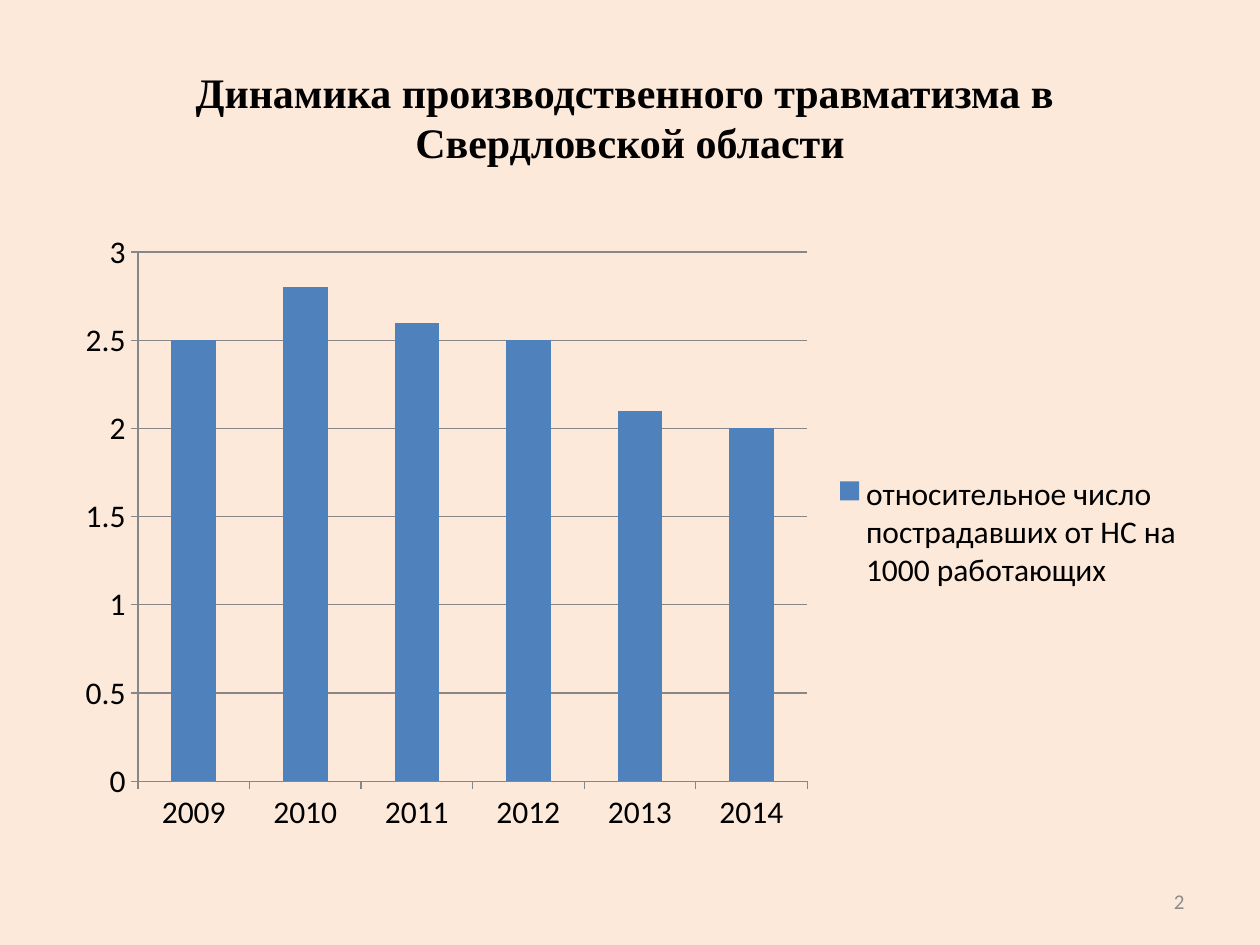
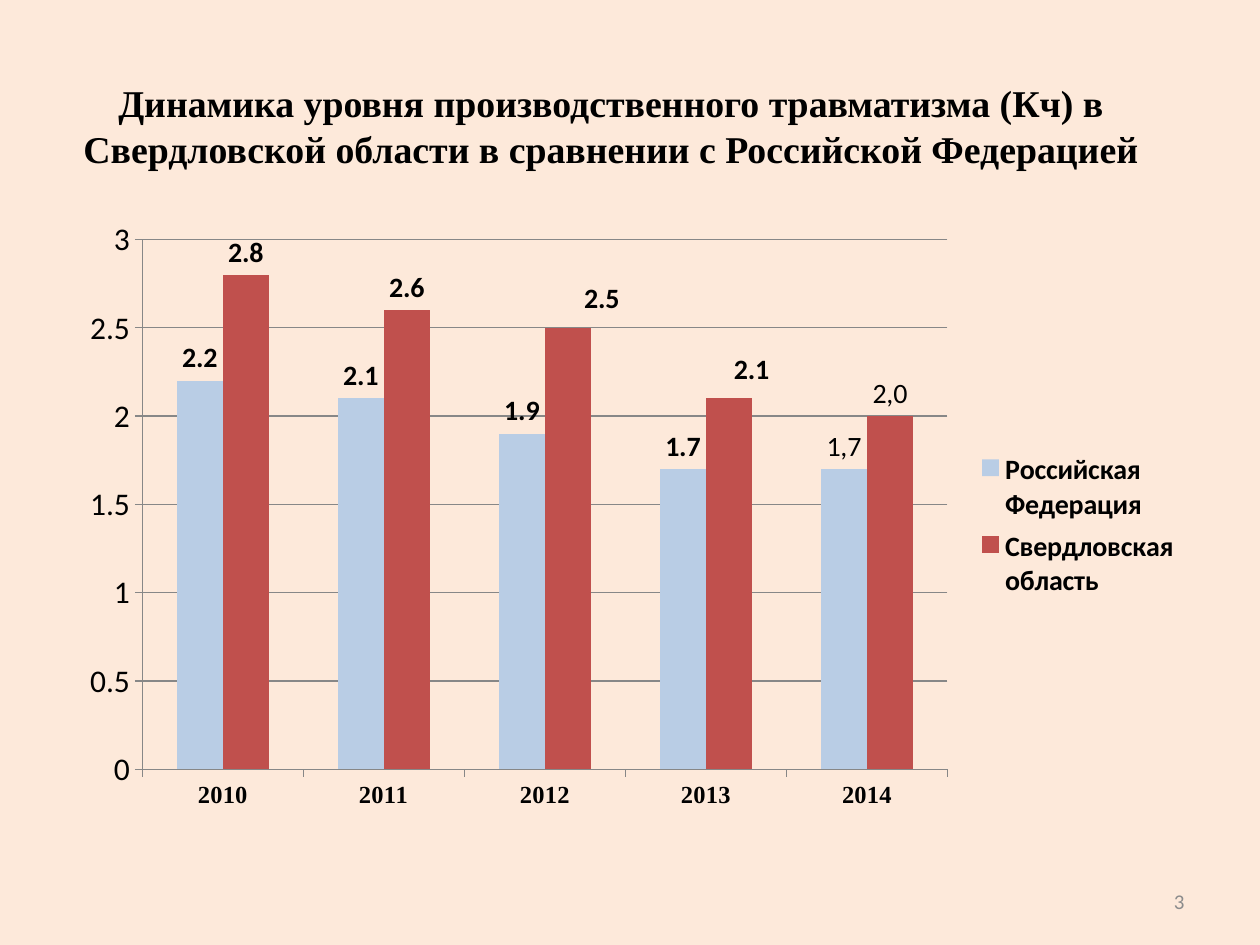
from lxml import etree
from pptx import Presentation
from pptx.chart.data import CategoryChartData
from pptx.dml.color import RGBColor
from pptx.enum.chart import (XL_CHART_TYPE as CHART, XL_LABEL_POSITION as LABEL,
                             XL_LEGEND_POSITION as LEGEND, XL_TICK_MARK as TICK)
from pptx.enum.text import MSO_ANCHOR as ANCHOR, PP_ALIGN as ALIGN
from pptx.oxml.ns import qn
from pptx.util import Inches, Pt

# Content
SLIDES = [
    dict(number=2, title="Динамика производственного травматизма в \vСвердловской области",
         title_at=(0.5, 0.3, 9, 1.25), title_size=24,
         years=["2009", "2010", "2011", "2012", "2013", "2014"],
         series=[dict(name="относительное число пострадавших от НС на 1000 работающих",
                      values=[2.5, 2.8, 2.6, 2.5, 2.1, 2], color="4F81BD")]),
    dict(number=3, title="Динамика уровня производственного травматизма (Кч) в "
                         "Свердловской области в сравнении с Российской Федерацией",
         title_at=(0.35, 0.37, 9, 1.25), title_size=21.6,
         years=["2010", "2011", "2012", "2013", "2014"],
         plot=dict(x=0.07, y=0.03, w=0.71, h=0.85),
         legend=dict(x=0.8, y=0.36, w=0.19, h=0.26),
         year_font=dict(name="Times New Roman", size=14, bold=True),
         legend_font=dict(size=16, bold=True),
         series=[dict(name="Российская Федерация", values=[2.2, 2.1, 1.9, 1.7, 1.7],
                      color="B9CDE5", labels=True, texts={4: "1,7"}),
                 dict(name="Свердловская область", values=[2.8, 2.6, 2.5, 2.1, 2],
                      color="C0504D", labels=True, texts={4: "2,0"},
                      shifts={2: dict(x=0.03, y=-0.01), 3: dict(x=0.02, y=-0.01)})]),
]

# Shared look
BACKGROUND, BLACK, GREY, AXIS = "FDE9DA", "000000", "8C8C8C", "878787"
CHART_AT = (0.5, 1.75, 9, 4.95)
NUMBER_AT = (7.17, 6.95, 2.33, 0.4)
TITLE_FONT = dict(name="Times New Roman", bold=True, color=BLACK)
NUMBER_FONT = dict(name="Calibri", size=12, color=GREY)
CHART_FONT = dict(name="Calibri", size=18, color=BLACK)
LABEL_FONT = dict(name="Calibri", size=16, bold=True, color=BLACK)


def rgb(value):
    return RGBColor.from_string(value)


def set_font(font, style):
    for key, value in style.items():
        if key == "color":
            font.color.rgb = rgb(value)
        else:
            setattr(font, key, Pt(value) if key == "size" else value)


def add_text(s, text, at, align, style):
    tf = s.shapes.add_textbox(*map(Inches, at)).text_frame
    tf.word_wrap, tf.vertical_anchor = True, ANCHOR.MIDDLE
    p = tf.paragraphs[0]
    p.text, p.alignment = text, align
    for r in p.runs:
        set_font(r.font, style)


def manual_layout(values, **modes):
    """Layout element; values are fractions of the chart area."""
    layout = etree.Element(qn("c:layout"))
    manual = etree.SubElement(layout, qn("c:manualLayout"))
    for tag, value in {**modes, **values}.items():
        etree.SubElement(manual, qn("c:" + tag)).set("val", str(value))
    return layout


def drop_layout(element):
    for old in element.findall(qn("c:layout")):
        element.remove(old)


def add_labels(series, item):
    labels = series.data_labels
    labels.show_value, labels.position = True, LABEL.OUTSIDE_END
    set_font(labels.font, LABEL_FONT)
    # Typed labels are not bold
    for i, text in item.get("texts", {}).items():
        label = series.points[i].data_label
        label.text_frame.text = text
        label.position = LABEL.OUTSIDE_END
        set_font(label.text_frame.paragraphs[0].runs[0].font, {**LABEL_FONT, "bold": False})
    # Labels moved away from their columns
    for i, shift in item.get("shifts", {}).items():
        label = series.points[i].data_label
        set_font(label.font, LABEL_FONT)
        label.position = LABEL.OUTSIDE_END
        for idx in labels._element.findall(qn("c:dLbl") + "/" + qn("c:idx")):
            if idx.get("val") == str(i):
                idx.addnext(manual_layout(shift))
    # No leader lines to moved labels
    for old in labels._element.findall(qn("c:showLeaderLines")):
        labels._element.remove(old)
    etree.SubElement(labels._element, qn("c:showLeaderLines")).set("val", "0")


def add_column_chart(s, spec):
    data = CategoryChartData()
    data.categories = spec["years"]
    for item in spec["series"]:
        data.add_series(item["name"], item["values"])
    chart = s.shapes.add_chart(CHART.COLUMN_CLUSTERED, *map(Inches, CHART_AT), data).chart
    chart.has_title = False
    set_font(chart.font, CHART_FONT)

    # Axes and gridlines
    years, values = chart.category_axis, chart.value_axis
    values.has_major_gridlines = True
    values.minimum_scale, values.maximum_scale, values.major_unit = 0, 3, 0.5
    for part in (years, values, values.major_gridlines):
        part.format.line.color.rgb = rgb(AXIS)
        part.format.line.width = Pt(0.75)
    for axis in (years, values):
        axis.major_tick_mark, axis.minor_tick_mark = TICK.OUTSIDE, TICK.NONE
    set_font(years.tick_labels.font, {**CHART_FONT, **spec.get("year_font", {})})

    # Legend
    chart.has_legend = True
    chart.legend.position, chart.legend.include_in_layout = LEGEND.RIGHT, False
    set_font(chart.legend.font, {**CHART_FONT, **spec.get("legend_font", {})})

    # Columns
    plot = chart.plots[0]
    plot.gap_width, plot.overlap, plot.vary_by_categories = 150, 0, False
    for series, item in zip(plot.series, spec["series"]):
        series.invert_if_negative = False
        series.format.fill.solid()
        series.format.fill.fore_color.rgb = rgb(item["color"])
        if item.get("labels"):
            add_labels(series, item)

    # Fixed places for the plot and the legend beside it
    if "plot" in spec:
        area = chart._chartSpace.find(".//" + qn("c:plotArea"))
        drop_layout(area)
        area.insert(0, manual_layout(spec["plot"], layoutTarget="inner",
                                     xMode="edge", yMode="edge"))
    if "legend" in spec:
        legend = chart._chartSpace.find(".//" + qn("c:legend"))
        drop_layout(legend)
        legend.find(qn("c:legendPos")).addnext(
            manual_layout(spec["legend"], xMode="edge", yMode="edge"))


def main():
    prs = Presentation()
    prs.slide_width, prs.slide_height = Inches(10), Inches(7.5)
    for spec in SLIDES:
        s = prs.slides.add_slide(prs.slide_layouts[6])
        s.background.fill.solid()
        s.background.fill.fore_color.rgb = rgb(BACKGROUND)
        add_text(s, spec["title"], spec["title_at"], ALIGN.CENTER,
                 {**TITLE_FONT, "size": spec["title_size"]})
        add_column_chart(s, spec)
        add_text(s, str(spec["number"]), NUMBER_AT, ALIGN.RIGHT, NUMBER_FONT)
    prs.save("out.pptx")


if __name__ == "__main__":
    main()
